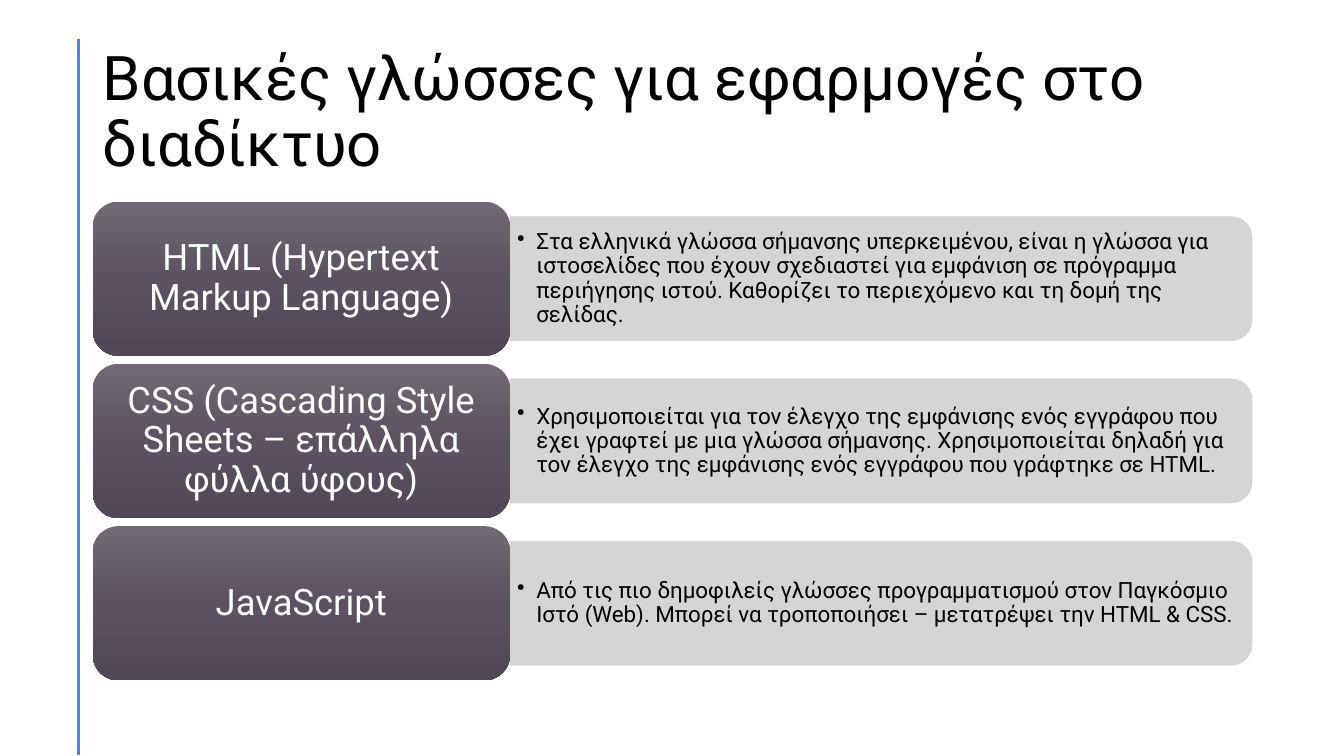
from copy import deepcopy
from dataclasses import dataclass

from lxml import etree
from pptx import Presentation
from pptx import util as u
from pptx.dml.color import RGBColor
from pptx.enum import shapes, text
from pptx.oxml import ns

FONT = "Roboto"
BLACK, WHITE, GREY, RULE_BLUE = "000000", "FFFFFF", "D2D1D2", "4A86E0"
LABEL_GRADIENT = ((0, "706A74"), (0.5, "5B5161"), (1, "514857"))

deck = Presentation()
deck.slide_width, deck.slide_height = u.Inches(13.33), u.Inches(7.5)
COLUMN, ROW = deck.slide_width / 100, deck.slide_height / 75


@dataclass(frozen=True)
class Area:
    column: float
    row: float
    columns: float
    rows: float

    def lengths(self) -> tuple[int, int, int, int]:
        return (round(self.column * COLUMN), round(self.row * ROW),
                round(self.columns * COLUMN), round(self.rows * ROW))


@dataclass(frozen=True)
class Language:
    label: str
    detail: str


LANGUAGES = (
    Language(
        "HTML (Hypertext Markup Language)",
        "Στα ελληνικά γλώσσα σήμανσης υπερκειμένου, είναι η γλώσσα για "
        "ιστοσελίδες που έχουν σχεδιαστεί για εμφάνιση σε πρόγραμμα περιήγησης "
        "ιστού. Καθορίζει το περιεχόμενο και τη δομή της σελίδας.",
    ),
    Language(
        "CSS (Cascading Style Sheets – επάλληλα φύλλα ύφους)",
        "Χρησιμοποιείται για τον έλεγχο της εμφάνισης ενός εγγράφου που έχει "
        "γραφτεί με μια γλώσσα σήμανσης. Χρησιμοποιείται δηλαδή για τον έλεγχο "
        "της εμφάνισης ενός εγγράφου που γράφτηκε σε HTML.",
    ),
    Language(
        "JavaScript",
        "Από τις πιο δημοφιλείς γλώσσες προγραμματισμού στον Παγκόσμιο Ιστό "
        "(Web). Μπορεί να τροποποιήσει – μετατρέψει την HTML & CSS.",
    ),
)
FIRST_ROW, ROW_PITCH = 20, 16.1


def color(value: str) -> RGBColor:
    return RGBColor.from_string(value)


def write(box, words: str, size: float, ink: str, align, inset: tuple[float, float]):
    frame = box.text_frame
    frame.word_wrap = True
    frame.auto_size = text.MSO_AUTO_SIZE.NONE
    frame.vertical_anchor = text.MSO_ANCHOR.MIDDLE
    frame.margin_left = frame.margin_right = u.Inches(inset[0])
    frame.margin_top = frame.margin_bottom = u.Inches(inset[1])
    para = frame.paragraphs[0]
    para.alignment = align
    para.line_spacing = 0.9
    span = para.add_run()
    span.text = words
    span.font.name, span.font.size = FONT, u.Pt(size)
    span.font.color.rgb = color(ink)
    return para


def add_bullet(para) -> None:
    properties = para._p.get_or_add_pPr()
    properties.set("marL", str(u.Inches(0.19)))
    properties.set("indent", str(-u.Inches(0.19)))
    etree.SubElement(properties, ns.qn("a:buChar")).set("char", "•")


def add_panel(page, area: Area) -> None:
    left, top, width, height = area.lengths()
    panel = page.shapes.add_shape(
        shapes.MSO_SHAPE.ROUND_2_SAME_RECTANGLE,
        left + (width - height) // 2, top + (height - width) // 2, height, width)
    panel.rotation = 90
    panel.shadow.inherit = False
    panel.fill.solid()
    panel.fill.fore_color.rgb = color(GREY)
    panel.line.color.rgb = color(GREY)
    panel.line.width = u.Pt(0.5)
    for paint in panel._element.spPr.iter(ns.qn("a:srgbClr")):
        etree.SubElement(paint, ns.qn("a:alpha")).set("val", "90000")


def add_detail(page, area: Area, words: str) -> None:
    box = page.shapes.add_textbox(*area.lengths())
    add_bullet(write(box, words, 16, BLACK, text.PP_ALIGN.LEFT, (0.07, 0.03)))


def add_label(page, area: Area, words: str) -> None:
    label = page.shapes.add_shape(shapes.MSO_SHAPE.ROUNDED_RECTANGLE, *area.lengths())
    label.shadow.inherit = False
    label.line.fill.background()
    label.fill.gradient()
    label.fill.gradient_angle = 270
    stops = label._element.spPr.find(f".//{ns.qn('a:gsLst')}")
    stops.append(deepcopy(stops[0]))
    for stop, (position, paint) in zip(label.fill.gradient_stops, LABEL_GRADIENT):
        stop.position = position
        stop.color.rgb = color(paint)
    write(label, words, 26, WHITE, text.PP_ALIGN.CENTER, (0.11, 0.05))


def add_rule(page, column: float, top: float, bottom: float) -> None:
    across = round(column * COLUMN)
    rule = page.shapes.add_connector(
        shapes.MSO_CONNECTOR.STRAIGHT,
        across, round(top * ROW), across, round(bottom * ROW))
    rule.line.color.rgb = color(RULE_BLUE)
    rule.line.width = u.Pt(2)
    etree.SubElement(rule._element.spPr, ns.qn("a:effectLst"))


def add_title(page, area: Area, words: str) -> None:
    title = page.shapes.title
    title.left, title.top, title.width, title.height = area.lengths()
    write(title, words, 44, BLACK, text.PP_ALIGN.LEFT, (0.1, 0.05))


def main() -> None:
    page = deck.slides.add_slide(deck.slide_layouts.get_by_name("Title Only"))
    add_rule(page, 5.85, 3.9, 74.9)
    add_title(page, Area(6.9, 4, 86.25, 14.5),
              "Βασικές γλώσσες για εφαρμογές στο διαδίκτυο")
    for index, language in enumerate(LANGUAGES):
        row = FIRST_ROW + index * ROW_PITCH
        add_panel(page, Area(37.95, row + 1.5, 55.2, 12.3))
        add_detail(page, Area(37.95, row + 2.1, 54.75, 11.1), language.detail)
        add_label(page, Area(6.9, row, 31.05, 15.3), language.label)
    deck.save("out.pptx")


if __name__ == "__main__":
    main()
